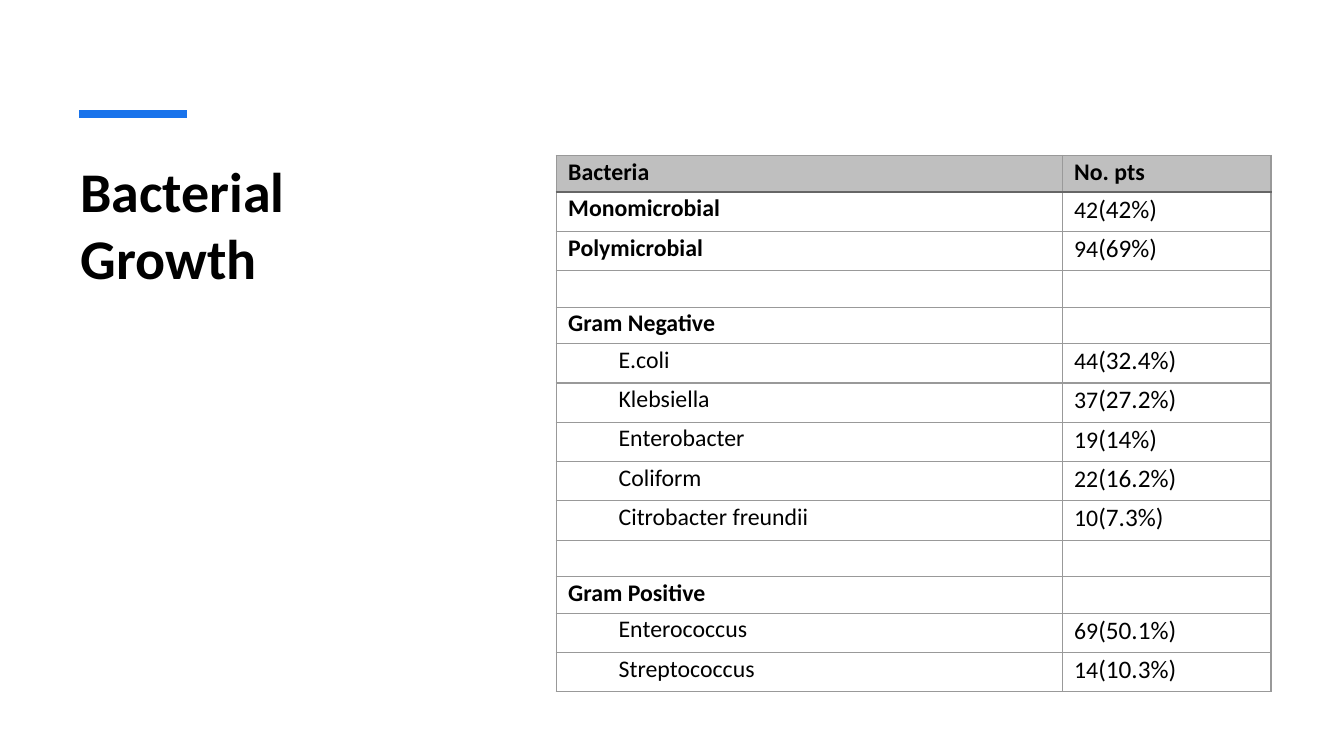
from lxml.etree import SubElement
from pptx import Presentation
from pptx.dml.color import RGBColor as RGB
from pptx.enum.shapes import MSO_CONNECTOR as CONN
from pptx.oxml.ns import qn
from pptx.util import Cm, Pt

COLORS = {"text": "000000", "accent": "1973EB", "head": "BFBFBF",
          "grid": "999999", "rule": "666666"}
HEADER = ("Bacteria", "No. pts")
GROUPS = [
    ("Gram Negative", [("E.coli", "44(32.4%)"), ("Klebsiella", "37(27.2%)"),
                       ("Enterobacter", "19(14%)"), ("Coliform", "22(16.2%)"),
                       ("Citrobacter freundii", "10(7.3%)")]),
    ("Gram Positive", [("Enterococcus", "69(50.1%)"),
                       ("Streptococcus", "14(10.3%)")]),
]
TOTALS = [("Monomicrobial", "42(42%)"), ("Polymicrobial", "94(69%)")]


def add_text(p, text, size=17, bold=False, font="Calibri", color="text"):
    r = p.add_run()
    r.text = text
    r.font.size, r.font.bold, r.font.name = Pt(size), bold, font
    r.font.color.rgb = RGB.from_string(COLORS[color])


def add_border(cell, side, color, width):
    ln = SubElement(cell._tc.get_or_add_tcPr(), qn(f"a:ln{side}"), w=str(Pt(width)))
    fill = SubElement(ln, qn("a:solidFill"))
    SubElement(fill, qn("a:srgbClr"), val=COLORS[color])


class Deck:
    """Slide builder that holds the style and the current slide."""

    def __init__(self):
        self.prs = Presentation()
        self.prs.slide_width, self.prs.slide_height = Cm(33.87), Cm(19.05)
        self.s = self.prs.slides.add_slide(self.prs.slide_layouts[6])

    def title(self, text, x, y, w, h):
        tf = self.s.shapes.add_textbox(Cm(x), Cm(y), Cm(w), Cm(h)).text_frame
        tf.word_wrap = True
        add_text(tf.paragraphs[0], text, size=40, bold=True)

    def line(self, x1, y1, x2, y2, width):
        sp = self.s.shapes.add_connector(CONN.STRAIGHT, Cm(x1), Cm(y1), Cm(x2), Cm(y2))
        sp.line.color.rgb = RGB.from_string(COLORS["accent"])
        sp.line.width = Pt(width)
        SubElement(sp._element.spPr, qn("a:effectLst"))

    def cell(self, cell, row):
        cell.margin_left = cell.margin_right = Cm(0.3)
        cell.margin_top, cell.margin_bottom = Cm(0.05), Cm(0)
        for side in "LRTB":
            heavy = (row, side) in ((0, "B"), (1, "T"))
            add_border(cell, side, *(("rule", 1.5) if heavy else ("grid", 1)))
        if row == 0:
            cell.fill.solid()
            cell.fill.fore_color.rgb = RGB.from_string(COLORS["head"])
        else:
            cell.fill.background()
        return cell.text_frame.paragraphs[0]

    def table(self, rows, x, y, widths, short, tall):
        heights = [tall if row and value else short
                   for row, (_, value, _) in enumerate(rows)]
        tbl = self.s.shapes.add_table(len(rows), len(widths), Cm(x), Cm(y),
                                      Cm(sum(widths)), Cm(sum(heights))).table
        tbl.horz_banding = False
        for col, width in zip(tbl.columns, widths):
            col.width = Cm(width)
        for i, (name, value, is_species) in enumerate(rows):
            tbl.rows[i].height = Cm(heights[i])
            name_p, value_p = (self.cell(c, i) for c in tbl.rows[i].cells)
            if is_species:
                name_p._p.get_or_add_pPr().set("marL", str(Cm(1.27)))
            if name:
                add_text(name_p, name, bold=not is_species)
            count, bracket, share = value.partition("(")
            if count:
                add_text(value_p, count, bold=i == 0)
            if share:
                add_text(value_p, bracket + share, size=18)


def main():
    rows = [(*pair, False) for pair in [HEADER, *TOTALS]]
    for group, species in GROUPS:
        rows += [("", "", False), (group, "", False)]
        rows += [(*pair, True) for pair in species]
    deck = Deck()
    deck.title("Bacterial Growth", 1.78, 3.81, 10.21, 10.9)
    deck.line(2, 2.87, 4.72, 2.87, 6)
    deck.table(rows, 14.02, 3.92, (12.75, 5.26), short=0.92, tall=0.99)
    deck.prs.save("out.pptx")


if __name__ == "__main__":
    main()
